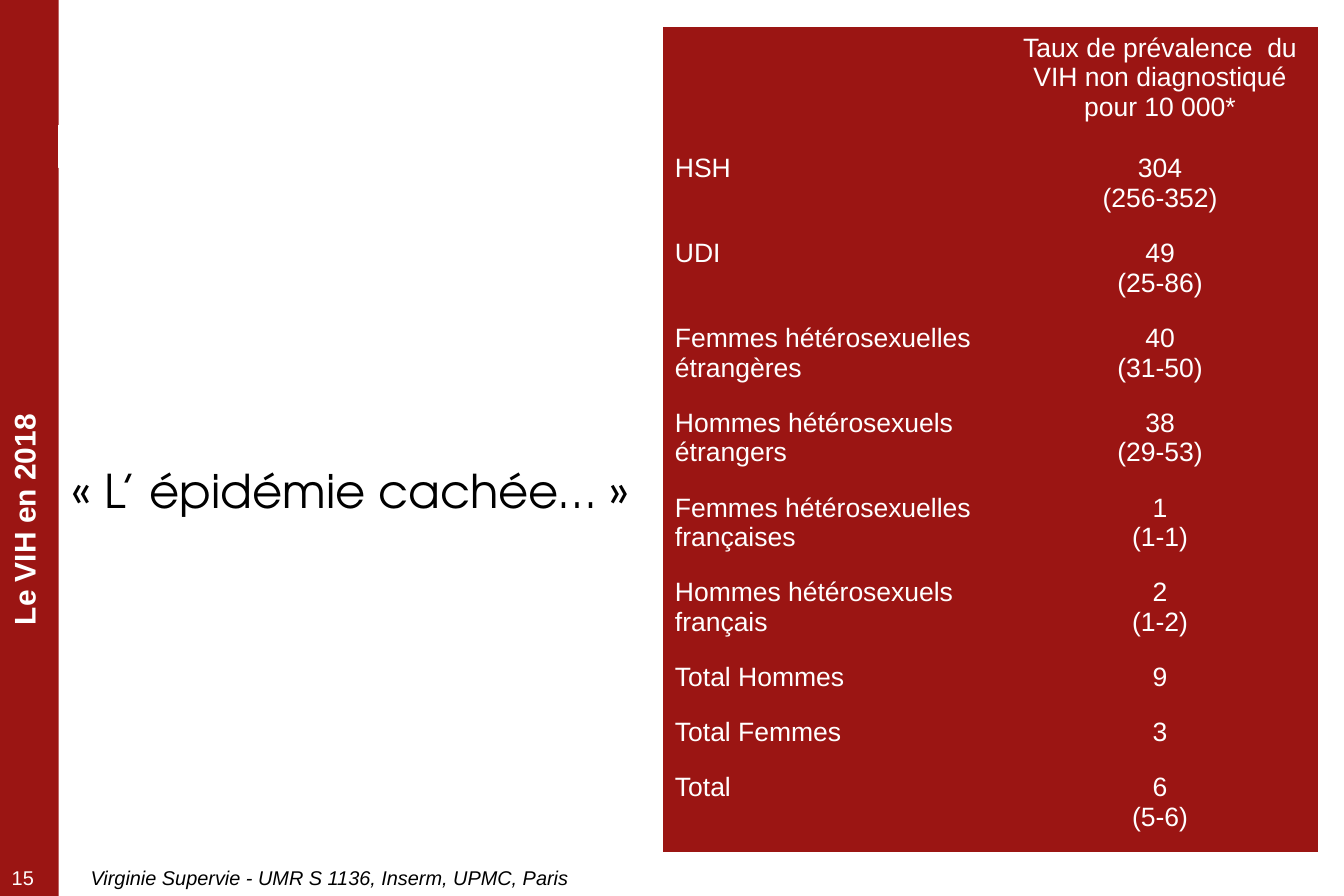
from pptx import Presentation
from pptx.dml.color import RGBColor
from pptx.enum.shapes import MSO_SHAPE
from pptx.enum.text import MSO_ANCHOR, PP_ALIGN
from pptx.util import Pt

RECT = MSO_SHAPE.RECTANGLE
LEFT, CENTER = PP_ALIGN.LEFT, PP_ALIGN.CENTER
TOP = MSO_ANCHOR.TOP
PX = 9144  # 100 px to the inch
RED, WHITE, BLACK = "9B1513", "FFFFFF", "000000"
PLAIN = "{2D5ABB26-0587-4C30-8999-92F81FD0307C}"  # no style, no grid


def paint(target, color):
    """Give a fill or a line one solid colour."""
    target.solid()
    target.fore_color.rgb = RGBColor.from_string(color)


def write(frame, text, size=16, color=WHITE, font="Arial", align=LEFT,
          bold=False, italic=False, wrap=True):
    frame.word_wrap = wrap
    frame.vertical_anchor = TOP
    frame.text = text
    for para in frame.paragraphs:
        para.alignment = align
        para.space_before = Pt(0)
        for run in para.runs:
            run.font.name = font
            run.font.size = Pt(size)
            run.font.bold = bold
            run.font.italic = italic
            paint(run.font.fill, color)


prs = Presentation()
prs.slide_width, prs.slide_height = 1125 * PX, 750 * PX
slide = prs.slides.add_slide(prs.slide_layouts[0])
shapes = slide.shapes
title = shapes.title
title.element.getparent().remove(title.element)

# Side band and the white strip beside it
for x, y, w, h, color in [(0, 0, 49, 750, RED), (49, 105, 1076, 35, WHITE)]:
    band = shapes.add_shape(RECT, x * PX, y * PX, w * PX, h * PX)
    band.shadow.inherit = False
    paint(band.fill, color)
    if color == WHITE:
        paint(band.line.fill, color)
        band.line.width = Pt(0.75)
    else:
        band.line.fill.background()

# Section label, page number and credit
labels = [
    ("Le VIH en 2018", (-79, 415, 198, 40), 270,
     dict(size=18, bold=True, align=CENTER, wrap=False)),
    ("15", (0, 720, 46, 30), 0, dict(size=12)),
    ("Virginie Supervie - UMR S 1136, Inserm, UPMC, Paris",
     (66, 720, 996, 30), 0, dict(size=12, color=BLACK, italic=True)),
]
for text, (x, y, w, h), turn, style in labels:
    box = shapes.add_textbox(x * PX, y * PX, w * PX, h * PX)
    box.rotation = turn
    write(box.text_frame, text, **style)

quote = slide.placeholders[1]
quote.left, quote.top = 44 * PX, 382 * PX
quote.width, quote.height = 499 * PX, 86 * PX
write(quote.text_frame, "« L’ épidémie cachée… »", size=28, color=BLACK,
      font="TeX Gyre Adventor", align=CENTER)

# Prevalence table: group, rate with its interval, row height
rates = [
    ("", "Taux de prévalence  du VIH non diagnostiqué pour 10 000*", 101),
    ("HSH", "304\n(256-352)", 71),
    ("UDI", "49\n(25-86)", 71),
    ("Femmes hétérosexuelles étrangères", "40\n(31-50)", 71),
    ("Hommes hétérosexuels étrangers", "38\n(29-53)", 71),
    ("Femmes hétérosexuelles françaises", "1\n(1-1)", 71),
    ("Hommes hétérosexuels français", "2\n(1-2)", 71),
    ("Total Hommes", "9", 46),
    ("Total Femmes", "3", 46),
    ("Total", "6\n(5-6)", 71),
]
grid = shapes.add_table(len(rates), 2, 555 * PX, 23 * PX, 548 * PX, 690 * PX)
table = grid.table
grid.element.xpath(".//a:tableStyleId")[0].text = PLAIN
table.first_row = table.horz_banding = False
for col, width in zip(table.columns, (284, 264)):
    col.width = width * PX
for i, (group, rate, height) in enumerate(rates):
    table.rows[i].height = height * PX
    for j, (text, align) in enumerate([(group, LEFT), (rate, CENTER)]):
        cell = table.cell(i, j)
        paint(cell.fill, RED)
        if text:
            write(cell.text_frame, text, align=align)

prs.save("out.pptx")
